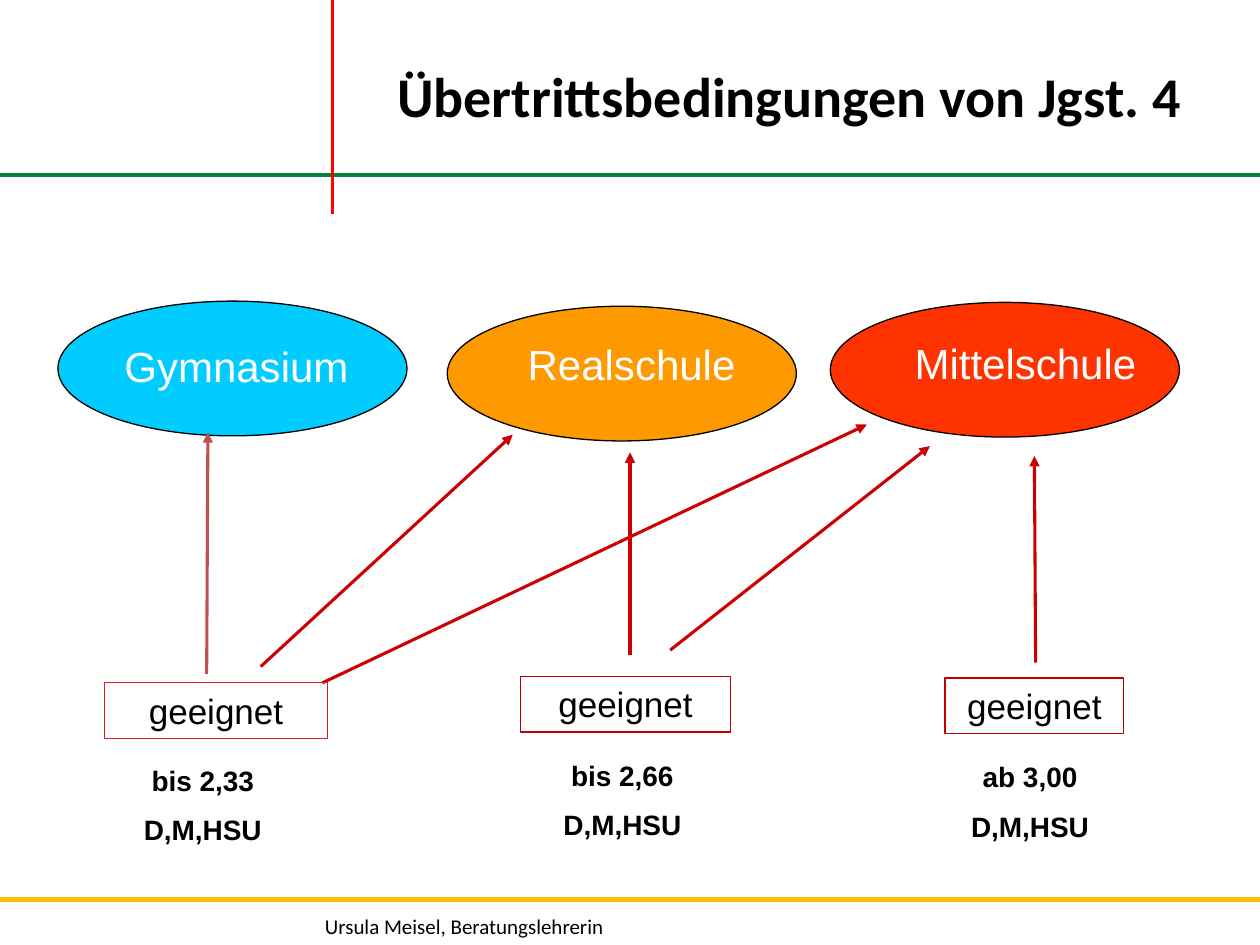
import pptx
import pptx.util
import pptx.dml.color
import pptx.enum.shapes
import pptx.enum.text
import pptx.oxml.ns
from lxml import etree

Pt = pptx.util.Pt
RGB = pptx.dml.color.RGBColor.from_string
SHAPE = pptx.enum.shapes.MSO_SHAPE
ALIGN = pptx.enum.text.PP_ALIGN
ANCHOR = pptx.enum.text.MSO_ANCHOR
qn = pptx.oxml.ns.qn

# Content (all lengths in points)
TITLE = "Übertrittsbedingungen von Jgst. 4"
FOOTER = "Ursula Meisel, Beratungslehrerin"
SCHOOLS = [  # name, fill, ellipse (left, top), label (left, top)
    ("Mittelschule", "FF3300", (474.5, 172.8), (495.4, 189.4)),
    ("Realschule", "FF9900", (255.6, 175), (274.3, 190.1)),
    ("Gymnasium", "00CCFF", (33.1, 172.1), (43.9, 190.8)),
]
VERDICT = "geeignet"
SUBJECTS = "D,M,HSU"
GRADES = [  # average, (left, top, width) of note and of verdict box, outline
    ("bis 2,33", (43.9, 432.7, 144), (59.8, 390.2, 127.4), "DA1F28"),
    ("bis 2,66", (283.7, 429.8, 144), (297.4, 386.6, 120.2), "C00000"),
    ("ab 3,00", (525.6, 430.6, 126), (540, 387.4, 102.2), "C00000"),
]
ARROWS = [  # start, end, colour
    ((118.1, 385.2), (118.8, 247), "C0504D"),
    ((149, 380.9), (293, 248.4), "CC0000"),
    ((184.3, 390.2), (495.4, 242.6), "CC0000"),
    ((360, 374.4), (360, 258.5), "CC0000"),
    ((383, 371.5), (531.4, 254.9), "CC0000"),
    ((591.8, 378.7), (591.1, 260.6), "CC0000"),
]
RULES = [  # start, end, colour, width
    ((0, 100), (720, 100), "00863D", 2.75),
    ((190, 0), (190, 122.4), "FF0000", 2),
    ((0, 514), (720, 514), "FFC000", 2.75),
]
ELLIPSE = (199.5, 77)
LABEL = (167.8, 36)
LABEL_INDENT = 27.2
NOTE_H, VERDICT_H = 56.2, 31.7

THEME = {
    "title": {"name": "Calibri", "size": Pt(32), "bold": True, "color": "000000"},
    "footer": {"name": "Calibri", "size": Pt(12), "bold": False, "color": "000000"},
    "school": {"name": "Arial", "size": Pt(24), "bold": False, "color": "FFFFFF"},
    "verdict": {"name": "Arial", "size": Pt(20), "bold": False, "color": "000000"},
    "note": {"name": "Arial", "size": Pt(16), "bold": True, "color": "000000"},
    "outline": "000000", "note_outline": "FFFFFF",
    "thin": 0.75, "arrow": 1.75, "note_gap": Pt(9),
}


def write(s, lines, style, align, **frame):
    tf = s.text_frame
    settings = {"word_wrap": True, "vertical_anchor": ANCHOR.TOP, **frame}
    for key, value in settings.items():
        setattr(tf, key, value)
    for i, line in enumerate(lines):
        p = tf.paragraphs[0] if i == 0 else tf.add_paragraph()
        p.alignment = align
        if i:
            p.space_before = THEME["note_gap"]
        r = p.add_run()
        r.text = line
        for key, value in THEME[style].items():
            if key == "color":
                r.font.color.rgb = RGB(value)
            else:
                setattr(r.font, key, value)


def add_box(slide, kind, box, outline, fill=None):
    s = slide.shapes.add_shape(kind, *map(Pt, box))
    s.shadow.inherit = False
    if fill:
        s.fill.solid()
        s.fill.fore_color.rgb = RGB(fill)
    else:
        s.fill.background()
    s.line.color.rgb = RGB(outline)
    s.line.width = Pt(THEME["thin"])
    return s


def add_line(slide, start, end, color, width, arrow=False):
    c = slide.shapes.add_connector(
        pptx.enum.shapes.MSO_CONNECTOR.STRAIGHT, *map(Pt, start + end))
    c.line.color.rgb = RGB(color)
    c.line.width = Pt(width)
    if arrow:
        etree.SubElement(c.line._get_or_add_ln(), qn("a:tailEnd"), type="triangle")
    etree.SubElement(c._element.spPr, qn("a:effectLst"))


def main():
    prs = pptx.Presentation()
    prs.slide_width, prs.slide_height = Pt(720), Pt(540)
    slide = prs.slides.add_slide(prs.slide_layouts[5])

    # Frame: title, rules and footer
    title = slide.shapes.title
    title.left, title.top, title.width, title.height = map(Pt, (201.6, 31.7, 499, 46.1))
    write(title, [TITLE], "title", ALIGN.CENTER)
    for rule in RULES:
        add_line(slide, *rule)
    footer = slide.shapes.add_textbox(*map(Pt, (178.6, 518.4, 244, 21.6)))
    write(footer, [FOOTER], "footer", ALIGN.LEFT)

    # Schools: ellipses, then their labels
    for name, fill, corner, _ in SCHOOLS:
        add_box(slide, SHAPE.OVAL, corner + ELLIPSE, THEME["outline"], fill)
    for name, _, _, corner in SCHOOLS:
        s = slide.shapes.add_textbox(*map(Pt, corner + LABEL))
        write(s, [name], "school", ALIGN.LEFT, margin_left=Pt(LABEL_INDENT))

    # Arrows from verdicts to schools
    for start, end, color in ARROWS:
        add_line(slide, start, end, color, THEME["arrow"], arrow=True)

    # Grade averages and verdicts
    for average, note, verdict, outline in GRADES:
        s = add_box(slide, SHAPE.RECTANGLE, note + (NOTE_H,), THEME["note_outline"])
        write(s, [average, SUBJECTS], "note", ALIGN.CENTER)
        s = add_box(slide, SHAPE.RECTANGLE, verdict + (VERDICT_H,), outline)
        write(s, [VERDICT], "verdict", ALIGN.CENTER)

    prs.save("out.pptx")


if __name__ == "__main__":
    main()
